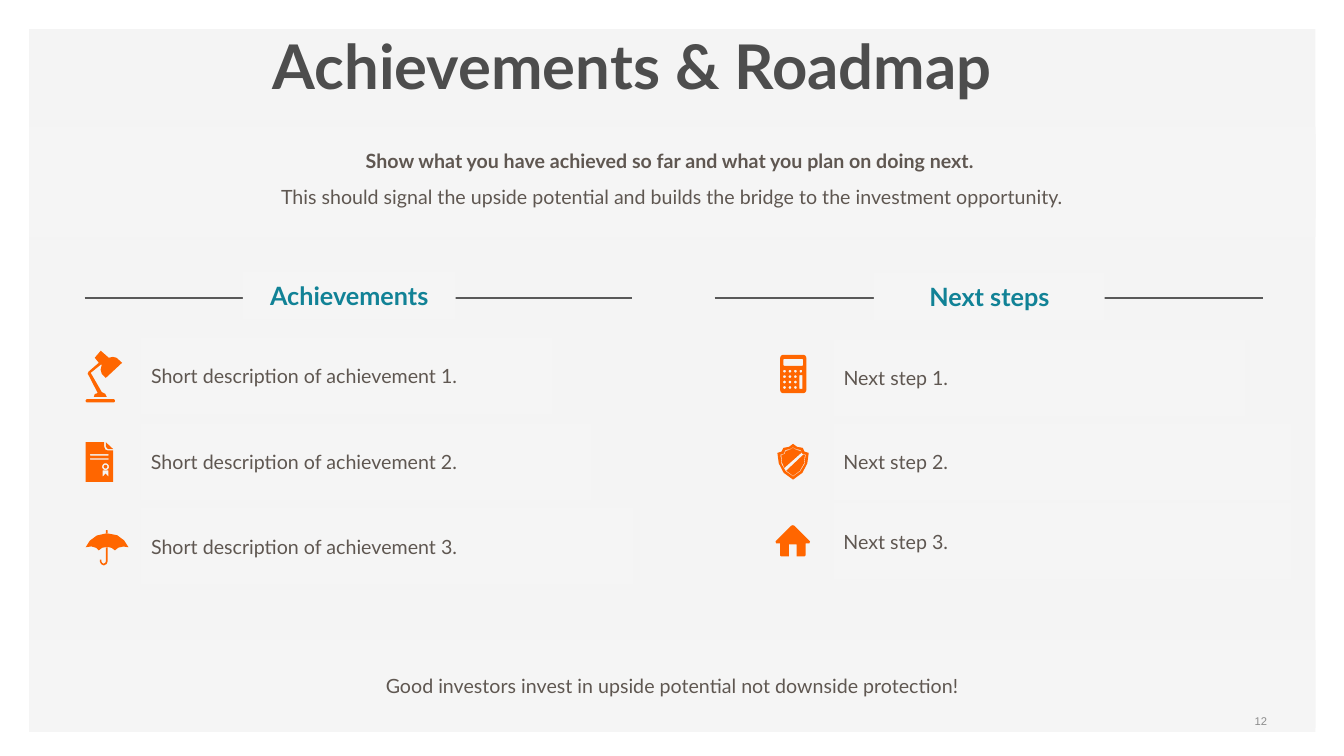
from dataclasses import dataclass
from math import cos, pi, sin

from lxml import etree
from pptx import Presentation
from pptx.dml.color import RGBColor
from pptx.enum.shapes import MSO_CONNECTOR, MSO_SHAPE
from pptx.enum.text import MSO_ANCHOR, PP_ALIGN
from pptx.oxml.ns import qn
from pptx.util import Pt

RECTANGLE = MSO_SHAPE.RECTANGLE
STRAIGHT = MSO_CONNECTOR.STRAIGHT
LEFT, CENTER, RIGHT = PP_ALIGN.LEFT, PP_ALIGN.CENTER, PP_ALIGN.RIGHT
TOP, MIDDLE = MSO_ANCHOR.TOP, MSO_ANCHOR.MIDDLE


@dataclass(frozen=True)
class Theme:
    backdrop: str = "F2F2F2"
    panel: str = "F5F5F5"
    title: str = "4D4D4D"
    body: str = "5F5751"
    heading: str = "118296"
    accent: str = "FF6600"
    rule: str = "595959"
    number: str = "8C8C8C"
    font: str = "Lato"
    number_font: str = "Arial"
    title_size: int = 44
    heading_size: int = 18
    body_size: int = 14
    number_size: int = 8


THEME = Theme()
PANEL_LEFT, PANEL_WIDTH = 20.88, 918.72


def color(value):
    return RGBColor.from_string(value)


def paint(shape, fill):
    shape.shadow.inherit = False
    shape.fill.solid()
    shape.fill.fore_color.rgb = color(fill)
    shape.line.fill.background()


def write(shape, lines, size, ink, align=LEFT, anchor=MIDDLE, bold_lines=0,
          spacing=None, font=THEME.font):
    frame = shape.text_frame
    frame.word_wrap = True
    frame.vertical_anchor = anchor
    frame.text = "\n".join(lines)
    for index, paragraph in enumerate(frame.paragraphs):
        paragraph.alignment = align
        if spacing:
            paragraph.line_spacing = spacing
        for run in paragraph.runs:
            run.font.name = font
            run.font.size = Pt(size)
            run.font.bold = index < bold_lines
            run.font.color.rgb = color(ink)


def add_panel(slide, left, top, width, height, fill=THEME.panel):
    panel = slide.shapes.add_shape(RECTANGLE, Pt(left), Pt(top), Pt(width), Pt(height))
    paint(panel, fill)
    return panel


def add_backdrop(slide):
    backdrop = add_panel(slide, PANEL_LEFT, 20.88, PANEL_WIDTH, 498.96, THEME.backdrop)
    tint = backdrop.fill._xPr.find(qn("a:solidFill")).find(qn("a:srgbClr"))
    etree.SubElement(tint, qn("a:alpha")).set("val", "78000")


def add_label(slide, left, top, width, height, text, size, ink, **style):
    label = slide.shapes.add_textbox(Pt(left), Pt(top), Pt(width), Pt(height))
    write(label, [text], size, ink, **style)


def add_rule(slide, left, right, y):
    rule = slide.shapes.add_connector(STRAIGHT, Pt(left), Pt(y), Pt(right), Pt(y))
    rule.line.color.rgb = color(THEME.rule)
    rule.line.width = Pt(1.5)
    etree.SubElement(rule._element.spPr, qn("a:effectLst"))


def add_heading(slide, text, rule_left, rule_right, left, top, width):
    add_rule(slide, rule_left, rule_right, 213.12)
    heading = add_panel(slide, left, top, width, 33.84)
    write(heading, [text], THEME.heading_size, THEME.heading, CENTER, bold_lines=1)


def add_icon(slide, left, top, contours):
    placed = [[(Pt(left + x), Pt(top + y)) for x, y in contour] for contour in contours]
    outline = slide.shapes.build_freeform(*placed[0][0], scale=1.0)
    for index, points in enumerate(placed):
        if index:
            outline.move_to(*points[0])
        outline.add_line_segments(points[1:], close=True)
    paint(outline.convert_to_shape(), THEME.accent)


def box(left, top, width, height, corner=0.3):
    right, bottom = left + width, top + height
    centers = [(right - corner, bottom - corner), (left + corner, bottom - corner),
               (left + corner, top + corner), (right - corner, top + corner)]
    return [(x + corner * cos(angle), y + corner * sin(angle))
            for quarter, (x, y) in enumerate(centers)
            for angle in [(quarter + step / 4) * pi / 2 for step in range(5)]]


def disc(x, y, radius):
    return box(x - radius, y - radius, 2 * radius, 2 * radius, radius)


def mirrored(half, axis):
    return half + [(2 * axis - x, y) for x, y in reversed(half[1:-1])]


def lamp():
    arm = [(1.4, 16.5), (2, 15), (9.4, 8.6), (6.5, 5), (10.8, 0), (16.5, 5), (19.5, 4.4),
           (22, 5), (26, 8.6), (14.4, 19.4), (11.5, 16.5), (10.7, 13.5), (11.5, 10),
           (10.8, 10), (3.6, 15.8), (11.5, 29.5), (14, 30.8), (15.1, 33), (5.8, 33),
           (6.5, 31), (8.6, 30.2), (2, 17.3)]
    return [arm, box(0, 34.6, 20.9, 2.3, 1.1)]


def certificate():
    page = [(0, 0), (13.2, 0), (13.2, 3), (14, 5.2), (15.8, 5.9), (19.6, 5.9), (19.6, 28.4), (0, 28.4)]
    fold = [(14.4, 0), (14.4, 3.2), (15.8, 4.9), (19.6, 4.9)]
    ribbon = [(12.2, 20.1), (12.2, 24.6), (14.2, 22.5), (16.2, 24.6), (16.2, 20.1)]
    return [page, fold, box(3, 8.6, 13.5, 0.9), box(3, 11.5, 13.5, 0.9),
            disc(14.2, 17.5, 2.5), disc(14.2, 17.5, 1.3), ribbon]


def umbrella():
    canopy = [(20.9, 14.4), (18.5, 12.6), (15.1, 11.9), (11.8, 12.6), (9.4, 14.4), (7.5, 12.6),
              (4, 11.6), (0, 12.2), (3, 7.5), (8, 3.8), (15.1, 2.2), (22.5, 3.6),
              (27.5, 7.3), (30.6, 12.2), (27, 11.7), (23.3, 12.5)]
    handle = [(14.5, 12.2), (15.7, 12.2), (15.7, 22.3), (15, 24.2), (13, 25.2), (11, 24.2),
              (10.1, 22.3), (10.1, 21), (11.2, 21), (11.2, 22.3), (11.8, 23.4), (13, 23.9),
              (14, 23.3), (14.5, 22.3)]
    return [canopy, box(14.5, 0, 1.2, 2), handle]


def calculator():
    columns = [3.1 + 3.9 * column for column in range(4)]
    rows = [11.7 + 3.87 * row for row in range(4)]
    keys = [disc(x, y, 1) for y in rows for x in columns[:3]]
    return [box(0, 0, 18.7, 27.4, 2.3), box(2.3, 2.9, 14.1, 5, 0.8),
            *keys, disc(columns[3], rows[0], 1), box(13.8, 14.5, 2.1, 9.9)]


def shield():
    rim = [(11.2, 0), (8.3, 2.2), (4.3, 2.9), (3, 5.6), (0, 6.5), (1, 14), (4.5, 20.7), (11.2, 25.6)]
    inset = [(11.2, 2.5), (8.5, 4), (5.7, 4.4), (4.7, 7), (2.2, 7.8), (3, 14.5), (6, 19.6), (11.2, 23.4)]
    upper = [(16.5, 5), (13.8, 4.5), (11.2, 2.9), (8.5, 4.5), (6, 5), (5.2, 7.2), (2.8, 8.2),
             (3.4, 13.5), (5, 17.2), (17.2, 6.4)]
    lower = [(6.4, 19.2), (11.2, 22.9), (16, 19.3), (19, 14), (19.7, 8.2), (18.6, 7.7)]
    return [mirrored(rim, 11.2), mirrored(inset, 11.2), upper, lower]


def house():
    half = [(12.6, 0), (11.5, 0.4), (0.3, 11.6), (0.7, 13), (3.5, 13), (3.5, 21.6), (4.2, 22.3),
            (9.8, 22.3), (9.8, 13.7), (12.6, 13.7)]
    return [mirrored(half, 12.6)]


def add_item(slide, text, left, top, width, icon, icon_left, icon_top):
    item = add_panel(slide, left, top, width, 54.72)
    write(item, [text], THEME.body_size, THEME.body)
    add_icon(slide, icon_left, icon_top, icon())


def main():
    deck = Presentation()
    deck.slide_width, deck.slide_height = Pt(960), Pt(540)
    slide = deck.slides.add_slide(deck.slide_layouts[6])

    add_backdrop(slide)
    add_label(slide, 141.12, 16.56, 621.36, 60.48, "Achievements & Roadmap", THEME.title_size,
              THEME.title, align=CENTER, anchor=TOP, bold_lines=1)
    add_panel(slide, PANEL_LEFT, 95.76, PANEL_WIDTH, 73.44)

    achievements = [(241.2, 293.76, lamp, 61.2, 250.56),
                    (302.4, 321.84, certificate, 61.2, 315.9),
                    (362.88, 351.36, umbrella, 61.2, 378.72)]
    next_steps = [(242.64, 293.76, calculator, 557.28, 253.44),
                  (302.4, 326.88, shield, 555.3, 317),
                  (359.28, 326.88, house, 553.7, 375.12)]
    for left, label, items in [(100.8, "Short description of achievement", achievements),
                               (595.44, "Next step", next_steps)]:
        for number, (top, *details) in enumerate(items, 1):
            add_item(slide, f"{label} {number}.", left, top, *details)

    add_heading(slide, "Achievements", 60.48, 451.44, 173.52, 194.4, 151.92)
    add_heading(slide, "Next steps", 510.48, 902.16, 624.24, 195.12, 164.88)

    intro = add_panel(slide, PANEL_LEFT, 90.72, PANEL_WIDTH, 65.52)
    write(intro, ["Show what you have achieved so far and what you plan on doing next. ",
                  "This should signal the upside potential and builds the bridge to the "
                  "investment opportunity."],
          THEME.body_size, THEME.body, CENTER, bold_lines=1, spacing=1.5)
    closing = add_panel(slide, PANEL_LEFT, 457.2, PANEL_WIDTH, 65.52)
    write(closing, ["Good investors invest in upside potential not downside protection!"],
          THEME.body_size, THEME.body, CENTER)
    add_label(slide, 688.32, 500.4, 223.92, 28.8, "12", THEME.number_size, THEME.number,
              align=RIGHT, font=THEME.number_font)
    deck.save("out.pptx")


if __name__ == "__main__":
    main()
